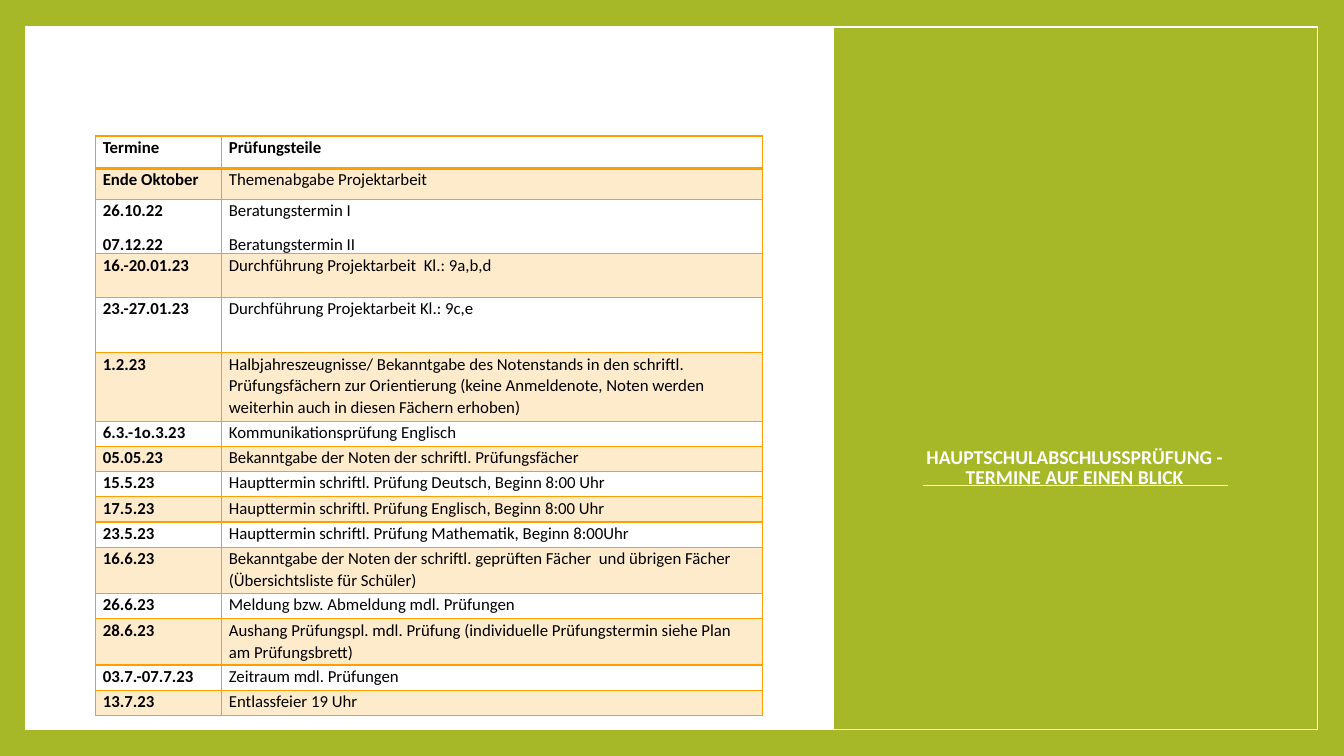
import pptx
import pptx.util
import pptx.dml.color
import pptx.enum.shapes
import pptx.enum.text
import pptx.oxml
import pptx.oxml.ns
from lxml import etree

PX = 9144  # 100 px to the inch
FONT = "Calibri"
COLORS = {"green": "A6B727", "white": "FFFFFF", "orange": "FE9E00", "black": "000000"}
COLUMN_WIDTHS = [125, 536]

# Each row: height, dates, matching exam parts
SCHEDULE = [
    (32, ["Termine"], ["Prüfungsteile"]),
    (31, ["Ende Oktober"], ["Themenabgabe Projektarbeit"]),
    (53, ["26.10.22", "07.12.22"], ["Beratungstermin I", "Beratungstermin II"]),
    (43, ["16.-20.01.23"], ["Durchführung Projektarbeit  Kl.: 9a,b,d"]),
    (55, ["23.-27.01.23"], ["Durchführung Projektarbeit Kl.: 9c,e"]),
    (68, ["1.2.23"], ["Halbjahreszeugnisse/ Bekanntgabe des Notenstands in den schriftl. "
                      "Prüfungsfächern zur Orientierung (keine Anmeldenote, Noten werden "
                      "weiterhin auch in diesen Fächern erhoben)"]),
    (25, ["6.3.-1o.3.23"], ["Kommunikationsprüfung Englisch"]),
    (25, ["05.05.23"], ["Bekanntgabe der Noten der schriftl. Prüfungsfächer"]),
    (25, ["15.5.23"], ["Haupttermin schriftl. Prüfung Deutsch, Beginn 8:00 Uhr"]),
    (25, ["17.5.23"], ["Haupttermin schriftl. Prüfung Englisch, Beginn 8:00 Uhr"]),
    (25, ["23.5.23"], ["Haupttermin schriftl. Prüfung Mathematik, Beginn 8:00Uhr"]),
    (46, ["16.6.23"], ["Bekanntgabe der Noten der schriftl. geprüften Fächer  und übrigen "
                       "Fächer (Übersichtsliste für Schüler)"]),
    (25, ["26.6.23"], ["Meldung bzw. Abmeldung mdl. Prüfungen"]),
    (46, ["28.6.23"], ["Aushang Prüfungspl. mdl. Prüfung (individuelle Prüfungstermin "
                       "siehe Plan am Prüfungsbrett)"]),
    (25, ["03.7.-07.7.23"], ["Zeitraum mdl. Prüfungen"]),
    (25, ["13.7.23"], ["Entlassfeier 19 Uhr"]),
]


def px(*lengths):
    return [pptx.util.Emu(length * PX) for length in lengths]


def rgb(name):
    return pptx.dml.color.RGBColor.from_string(COLORS[name])


def style_para(para, size, color, bold):
    for span in para.runs:
        span.font.name = FONT
        span.font.size = pptx.util.Pt(size)
        span.font.bold = bold
        span.font.color.rgb = rgb(color)


def add_panel(page, box, fill=None):
    panel = page.shapes.add_shape(pptx.enum.shapes.MSO_SHAPE.RECTANGLE, *px(*box))
    panel.shadow.inherit = False
    if fill:
        panel.fill.solid()
        panel.fill.fore_color.rgb = rgb(fill)
    else:
        panel.fill.background()
    panel.line.color.rgb = rgb("white")
    panel.line.width = pptx.util.Pt(1)


def add_rule(page, left, top, width):
    rule = page.shapes.add_connector(
        pptx.enum.shapes.MSO_CONNECTOR.STRAIGHT, *px(left, top, left + width, top))
    rule.line.color.rgb = rgb("white")
    rule.line.width = pptx.util.Pt(0.79)
    etree.SubElement(rule._element.spPr, pptx.oxml.ns.qn("a:effectLst"))


def add_title(page, box):
    left, top = box[:2]
    add_rule(page, left + 89, top + 455, 303)
    title = page.shapes.add_textbox(*px(left + 70, top + 67, 340, 396))
    frame = title.text_frame
    frame.word_wrap = True
    frame.vertical_anchor = pptx.enum.text.MSO_ANCHOR.BOTTOM
    frame.text = "HAUPTSCHULABSCHLUSSPRÜFUNG - TERMINE AUF EINEN BLICK"
    para = frame.paragraphs[0]
    para.alignment = pptx.enum.text.PP_ALIGN.CENTER
    para.line_spacing = 0.85
    style_para(para, 14, "white", True)


def set_borders(cell, widths):
    properties = cell._tc.get_or_add_tcPr()
    for index, (side, width) in enumerate(widths.items()):
        border = pptx.oxml.parse_xml(
            f'<a:ln{side} {pptx.oxml.ns.nsdecls("a")} w="{pptx.util.Pt(width)}">'
            f'<a:solidFill><a:srgbClr val="{COLORS["orange"]}"/></a:solidFill></a:ln{side}>')
        properties.insert(index, border)


def fill_cell(cell, shaded):
    if not shaded:
        cell.fill.background()
        return
    cell.fill.solid()
    cell.fill.fore_color.rgb = rgb("orange")
    color = cell._tc.tcPr.find(".//" + pptx.oxml.ns.qn("a:srgbClr"))
    etree.SubElement(color, pptx.oxml.ns.qn("a:alpha"), val="20000")


def write_cell(cell, lines, bold):
    cell.margin_left, cell.margin_right, cell.margin_top, cell.margin_bottom = px(7, 7, 0, 0)
    cell.text_frame.text = "\n".join(lines)
    for para in cell.text_frame.paragraphs:
        para.line_spacing = 1.07
        para.space_after = pptx.util.Pt(8)
        style_para(para, 12, "black", bold)


def add_schedule(page, left, top):
    height = sum(row[0] for row in SCHEDULE)
    box = px(left, top, sum(COLUMN_WIDTHS), height)
    table = page.shapes.add_table(len(SCHEDULE), len(COLUMN_WIDTHS), *box).table
    table.first_row = False
    table.horz_banding = False
    for column, width in zip(table.columns, COLUMN_WIDTHS):
        column.width = px(width)[0]
    for r, (row_height, *texts) in enumerate(SCHEDULE):
        table.rows[r].height = px(row_height)[0]
        for c, lines in enumerate(texts):
            cell = table.cell(r, c)
            write_cell(cell, lines, bold=r == 0 or c == 0)
            fill_cell(cell, shaded=r % 2 == 1)
            # The rule under the header is heavier
            set_borders(cell, {"L": 1, "R": 1, "T": 2 if r == 1 else 1, "B": 2 if r == 0 else 1})


def build_schedule_slide(page, box):
    left, top, width, height = box
    page.background.fill.solid()
    page.background.fill.fore_color.rgb = rgb("green")
    # White sheet, green title panel and outer outline
    title_box = (left + width - 481, top, 481, height)
    add_panel(page, box, "white")
    add_panel(page, title_box, "green")
    add_panel(page, box)
    # Title and table of dates
    add_title(page, title_box)
    add_schedule(page, left + 70, top + 108)


def main():
    deck = pptx.Presentation()
    deck.slide_width, deck.slide_height = px(1333, 750)
    page = deck.slides.add_slide(deck.slide_layouts[6])
    build_schedule_slide(page, (25, 27, 1282, 697))
    deck.save("out.pptx")


if __name__ == "__main__":
    main()
